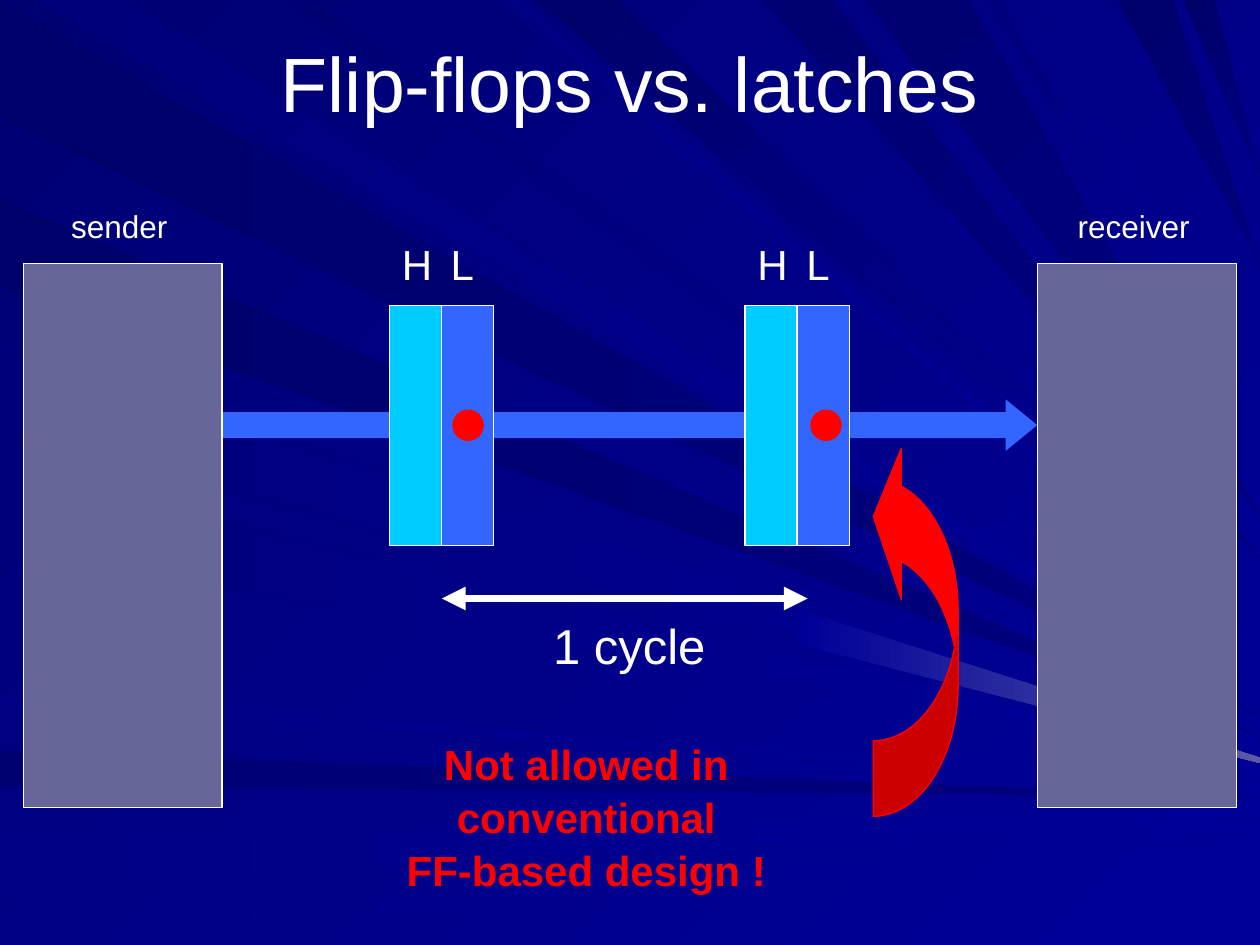
from lxml.etree import SubElement
from pptx import Presentation
from pptx.dml.color import RGBColor as Rgb
from pptx.enum.shapes import MSO_CONNECTOR as Link, MSO_SHAPE as Shape
from pptx.enum.text import MSO_ANCHOR as Anchor, MSO_AUTO_SIZE as AutoSize, PP_ALIGN as Align
from pptx.oxml.ns import qn
from pptx.util import Pt

COLORS = {
    "ink": "00006B", "deep": "000073", "dusk": "00007B", "navy": "000080",
    "dawn": "000085", "royal": "000099", "haze": "5A5AA6",
    "white": "FFFFFF", "red": "FF0000", "blue": "3366FF",
    "cyan": "00CCFF", "slate": "666699",
}
WIDTH, HEIGHT = 720, 540

LEFT_RAYS = [
    ("ink", "navy", 410, 1, 67),
    ("deep", "navy", 455, 429, 449),
    ("dawn", "royal", 467, 479, 507),
    ("dawn", "royal", 477, 529, 540),
    ("ink", "navy", 421, 114, 164),
    ("dusk", "royal", 431, 200, 248),
    ("dusk", "royal", 436, 270, 315),
    ("dawn", "royal", 448, 397, 403),
]
TOP_RAYS = [
    ("dusk", "royal", 405, 19, 73),
    ("deep", "royal", 396, 162, 178),
    ("dawn", "royal", 373, 287, 300),
    ("ink", "royal", 355, 307, 354),
    ("deep", "navy", 320, 436, 476),
    ("deep", "navy", 295, 494, 554),
    ("dusk", "royal", 257, 565, 570),
    ("dawn", "royal", 242, 587, 593),
    ("ink", "navy", 151, 639, 670),
    ("ink", "navy", 101, 676, 694),
]


def color(name):
    return Rgb.from_string(COLORS[name])


class SlideBuilder:
    font_name = "Arial"
    outline = 0.75

    def __init__(self, page):
        self.page = page

    def gradient(self, fill, start, end, angle):
        fill.gradient()
        fill.gradient_angle = (360 - angle) % 360
        for stop, name in zip(fill.gradient_stops, (start, end)):
            stop.color.rgb = color(name)

    def background(self, start, end, angle):
        self.gradient(self.page.background.fill, start, end, angle)

    def ray(self, start, end, angle, points):
        corners = [(Pt(x), Pt(y)) for x, y in points]
        outline = self.page.shapes.build_freeform(*corners[0])
        outline.add_line_segments(corners[1:], close=True)
        ray = outline.convert_to_shape()
        ray.shadow.inherit = False
        ray.line.fill.background()
        self.gradient(ray.fill, start, end, angle)

    def shape(self, kind, left, top, width, height, fill, line=None, adjust=()):
        shape = self.page.shapes.add_shape(kind, Pt(left), Pt(top), Pt(width), Pt(height))
        shape.shadow.inherit = False
        shape.fill.solid()
        shape.fill.fore_color.rgb = color(fill)
        if line:
            shape.line.color.rgb = color(line)
            shape.line.width = Pt(self.outline)
        else:
            shape.line.fill.background()
        for index, value in enumerate(adjust):
            shape.adjustments[index] = value
        return shape

    def text(self, left, top, width, height, lines, size, ink="white", bold=False,
             wrap=False, align=Align.LEFT, anchor=Anchor.TOP, spacing=None):
        box = self.page.shapes.add_textbox(Pt(left), Pt(top), Pt(width), Pt(height))
        frame = box.text_frame
        frame.word_wrap = wrap
        frame.auto_size = AutoSize.NONE if wrap else AutoSize.SHAPE_TO_FIT_TEXT
        frame.vertical_anchor = anchor
        frame.text = "\n".join(lines)
        for para in frame.paragraphs:
            para.alignment = align
            if spacing:
                para.line_spacing = spacing
            para.font.name = self.font_name
            para.font.size = Pt(size)
            para.font.bold = bold
            para.font.color.rgb = color(ink)

    def double_arrow(self, left, right, y, width, ink):
        arrow = self.page.shapes.add_connector(Link.STRAIGHT, Pt(left), Pt(y), Pt(right), Pt(y))
        arrow.line.color.rgb = color(ink)
        arrow.line.width = Pt(width)
        properties = arrow._element.spPr
        for end in ("a:headEnd", "a:tailEnd"):
            SubElement(properties.find(qn("a:ln")), qn(end), type="triangle")
        SubElement(properties, qn("a:effectLst"))


def main():
    deck = Presentation()
    deck.slide_width, deck.slide_height = Pt(WIDTH), Pt(HEIGHT)
    slide = SlideBuilder(deck.slides.add_slide(deck.slide_layouts[6]))

    slide.background("deep", "royal", 45)
    for start, end, tip, near, far in LEFT_RAYS:
        slide.ray(start, end, 0, [(0, near), (WIDTH, tip), (0, far)])
    for start, end, tip, near, far in TOP_RAYS:
        slide.ray(start, end, 45, [(near, 0), (WIDTH, tip), (far, 0)])
    slide.ray("royal", "haze", 0, [(458, 349), (WIDTH, 433), (WIDTH, 436), (456, 368)])

    slide.text(36, 1.5, 648, 90, ["Flip-flops vs. latches"], 44,
               wrap=True, align=Align.CENTER, anchor=Anchor.MIDDLE)
    slide.shape(Shape.RIGHT_ARROW, 126.7, 228.2, 466, 29.5, "blue", adjust=(0.5, 0.61))

    for left, width, label in ((13.5, 70, "sender"), (593, 78.5, "receiver")):
        slide.shape(Shape.RECTANGLE, left, 150.5, 113.5, 311, "slate", "white")
        slide.text(left + 55 - width / 2, 114.5, width, 29, [label], 18)

    for left, dot_left in ((222.5, 258.5), (425.7, 463)):
        slide.shape(Shape.RECTANGLE, left, 174.5, 29.8, 137.2, "cyan", "white")
        slide.shape(Shape.RECTANGLE, left + 29.8, 174.5, 29.8, 137.2, "blue", "white")
        slide.shape(Shape.OVAL, dot_left, 234, 18, 18, "red")
        slide.text(left, 132.5, 31.5, 36, ["H"], 24)
        slide.text(left + 28, 132.5, 28, 36, ["L"], 24)

    slide.double_arrow(252.5, 461.5, 342, 4.5, "white")
    slide.text(309, 348, 101.5, 41, ["1 cycle"], 28)
    slide.text(215, 417, 240, 94, ["Not allowed in conventional", "FF-based design !"], 24,
               ink="red", bold=True, wrap=True, align=Align.CENTER, spacing=1.05)
    warning = slide.shape(Shape.CURVED_LEFT_ARROW, 499, 252, 48.5, 214.5, "red", "red",
                          adjust=(0.89, 1.78, 0.33))
    warning._element.spPr.xfrm.set("flipV", "1")
    deck.save("out.pptx")


if __name__ == "__main__":
    main()
